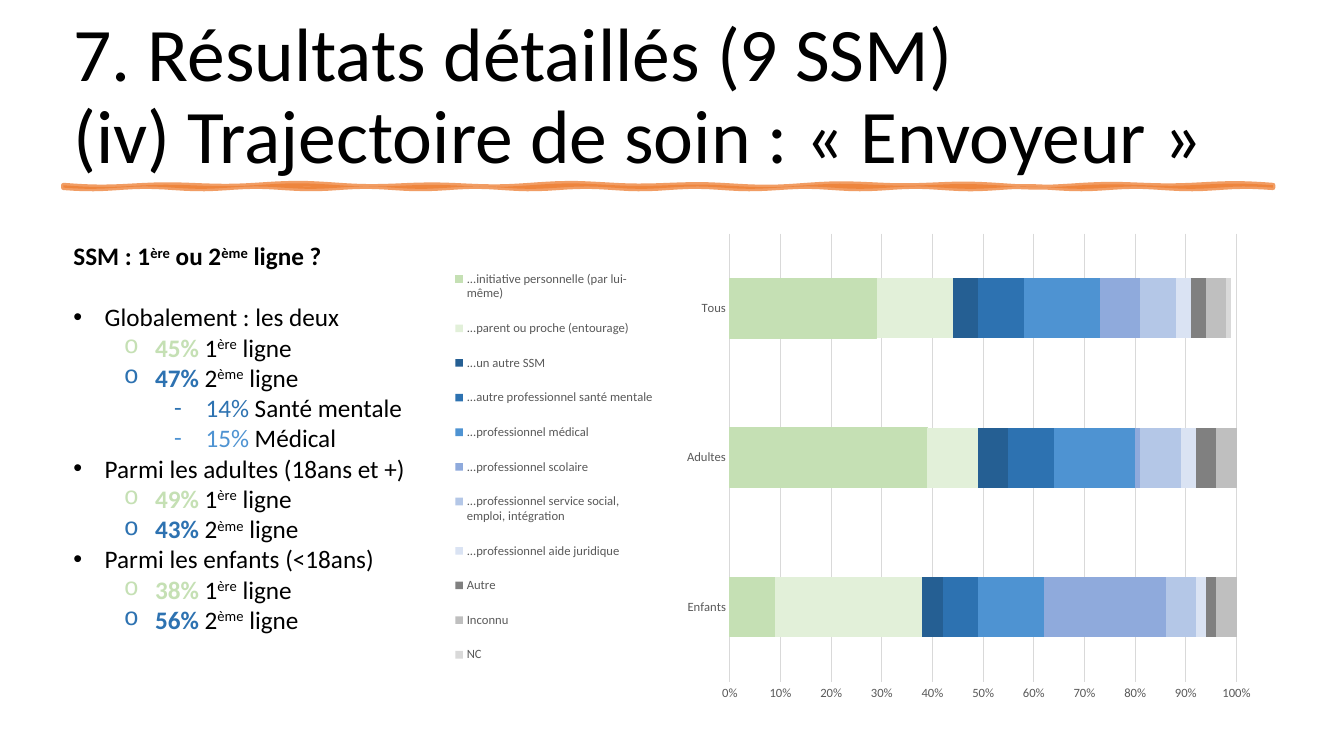
"""Build the slide on who sends patients to the mental health services."""
from math import pi, sin
from lxml.etree import SubElement
from pptx import Presentation
from pptx.chart.data import CategoryChartData
from pptx.dml.color import RGBColor
from pptx.enum.chart import XL_CHART_TYPE, XL_LEGEND_POSITION, XL_TICK_MARK
from pptx.enum.text import MSO_ANCHOR
from pptx.oxml import parse_xml
from pptx.oxml.ns import nsdecls, qn
from pptx.util import Cm, Pt

FONT = "Calibri"
BLACK, GREY, RULE, ORANGE = "000000", "595959", "D9D9D9", "ED7D31"
GREEN, BLUE, SKY = "C5E0B4", "2D72B1", "4E93D2"
TITLE = "7. Résultats détaillés (9 SSM)\v(iv) Trajectoire de soin : «\u00a0Envoyeur\u00a0»"
HEAD = "SSM : 1^ère^ ou 2^ème^ ligne ?"
FIRST, SECOND = " 1^ère^ ligne", " 2^ème^ ligne"
ITEMS = [
    (0, "", BLACK, "Globalement : les deux"),
    (1, "45%", GREEN, FIRST),
    (1, "47%", BLUE, SECOND),
    (2, "14%", BLUE, " Santé mentale"),
    (2, "15%", SKY, " Médical"),
    (0, "", BLACK, "Parmi les adultes (18ans et +)"),
    (1, "49%", GREEN, FIRST),
    (1, "43%", BLUE, SECOND),
    (0, "", BLACK, "Parmi les enfants (<18ans)"),
    (1, "38%", GREEN, FIRST),
    (1, "56%", BLUE, SECOND),
]
BULLETS = [("•", "Arial"), ("o", "Courier New"), ("-", FONT)]
CATS = ["Enfants", "Adultes", "Tous"]
SERIES = [
    ("...initiative personnelle (par lui-même)", (0.09, 0.39, 0.29), GREEN),
    ("...parent ou proche (entourage)", (0.29, 0.1, 0.15), "E2F0D9"),
    ("...un autre SSM", (0.04, 0.06, 0.05), "255F93"),
    ("...autre professionnel santé mentale", (0.07, 0.09, 0.09), BLUE),
    ("...professionnel médical", (0.13, 0.16, 0.15), SKY),
    ("...professionnel scolaire", (0.24, 0.01, 0.08), "8FAADC"),
    ("...professionnel service social, emploi, intégration", (0.06, 0.08, 0.07), "B4C7E7"),
    ("...professionnel aide juridique", (0.02, 0.03, 0.03), "DAE3F3"),
    ("Autre", (0.02, 0.04, 0.03), "808080"),
    ("Inconnu", (0.04, 0.04, 0.04), "BFBFBF"),
    ("NC", (0, 0, 0.01), RULE),
]
PLOT = {"x": 0.343, "y": 0.034, "w": 0.613, "h": 0.895}
LEGEND = {"x": 0.01, "y": 0.07, "w": 0.24, "h": 0.86}
BOXES = {
    "title": (1.6, 0.66, 30.61, 3.99),
    "list": (1.6, 5.94, 9.35, 10.26),
    "chart": (11.25, 5.46, 20.83, 12.62),
}


def put(item, values):
    """Set each attribute of an item from a dict."""
    for name, value in values.items():
        setattr(item, name, value)


def tint(part, code):
    """Give a fill a solid colour."""
    part.solid()
    part.fore_color.rgb = RGBColor.from_string(code)


def style(font, size, code, bold=False):
    """Set the face, size, weight and colour of a font."""
    put(font, {"name": FONT, "size": Pt(size), "bold": bold})
    tint(font.fill, code)


def place(name):
    """Return the four lengths of a named box."""
    return [Cm(side) for side in BOXES[name]]


def write(para, text, code=BLACK, bold=False):
    """Add runs to a paragraph, raising the parts between carets."""
    for rank, part in enumerate(text.split("^")):
        if part:
            run = para.add_run()
            run.text = part
            style(run.font, 18, code, bold)
            if rank % 2:
                run.font._element.set("baseline", "30000")


def mark(para, level):
    """Indent a paragraph and give it the bullet of its level."""
    sign, face = BULLETS[level]
    props = para._p.get_or_add_pPr()
    props.set("marL", str(Cm(0.79 + 1.27 * level)))
    props.set("indent", str(Cm(-0.79)))
    SubElement(props, qn("a:buFont")).set("typeface", face)
    SubElement(props, qn("a:buChar")).set("char", sign)


def add_title(slide):
    """Add the two-line title."""
    frame = slide.shapes.add_textbox(*place("title")).text_frame
    put(frame, {"word_wrap": True, "vertical_anchor": MSO_ANCHOR.BOTTOM})
    para = frame.paragraphs[0]
    put(para, {"text": TITLE, "line_spacing": 0.9})
    for run in para.runs:
        style(run.font, 54, BLACK)


def add_stroke(slide):
    """Add the wavy brush stroke under the title."""
    steps, left, width = 120, 1.6, 30.48
    top, low = [], []
    for step in range(steps + 1):
        across, turn = left + width * step / steps, 2 * pi * step / steps
        top.append((Cm(across), Cm(4.67 + 0.03 * sin(9 * turn) + 0.02 * sin(4 * turn))))
        low.append((Cm(across), Cm(4.73 + 0.03 * sin(11 * turn))))
    build = slide.shapes.build_freeform(*top[0], scale=1.0)
    build.add_line_segments(top[1:] + low[::-1], close=True)
    stroke = build.convert_to_shape()
    stroke.shadow.inherit = False
    stroke.line.width = Pt(3.5)
    for part in (stroke.fill, stroke.line.fill):
        tint(part, ORANGE)
    for shade in stroke._element.spPr.iter(qn("a:srgbClr")):
        SubElement(shade, qn("a:alpha")).set("val", "75000")


def add_list(slide):
    """Add the heading and the bulleted shares."""
    frame = slide.shapes.add_textbox(*place("list")).text_frame
    frame.word_wrap = True
    write(frame.paragraphs[0], HEAD, bold=True)
    for rank, (level, share, code, text) in enumerate(ITEMS):
        para = frame.add_paragraph()
        para.level = level
        if rank == 0:
            para.space_before = Pt(22)
        mark(para, level)
        write(para, share, code, level == 1)
        write(para, text)


def layout(box, inner=False):
    """Return the XML of a manual chart layout."""
    target = '<c:layoutTarget val="inner"/>' if inner else ""
    modes = "".join(f'<c:{side}Mode val="edge"/>' for side in "xy")
    sides = "".join(f'<c:{side} val="{size}"/>' for side, size in box.items())
    return parse_xml(f'<c:layout {nsdecls("c")}><c:manualLayout>{target}{modes}{sides}'
                     "</c:manualLayout></c:layout>")


def add_bars(slide):
    """Add the stacked bars by age group."""
    data = CategoryChartData(number_format="0%")
    data.categories = CATS
    for name, values, _ in SERIES:
        data.add_series(name, values)
    chart = slide.shapes.add_chart(XL_CHART_TYPE.BAR_STACKED, *place("chart"), data).chart
    put(chart, {"has_title": False, "has_legend": True})
    style(chart.font, 10, BLACK)
    put(chart.legend, {"position": XL_LEGEND_POSITION.LEFT, "include_in_layout": False})
    style(chart.legend.font, 9, GREY)
    plot = chart.plots[0]
    put(plot, {"gap_width": 150, "overlap": 100, "vary_by_categories": False})
    for bar, (_, _, code) in zip(plot.series, SERIES):
        tint(bar.format.fill, code)
    edge = plot.series[0].format.line
    tint(edge.fill, GREEN)
    edge.width = Pt(0.75)
    group, scale = chart.category_axis, chart.value_axis
    for axis in (group, scale):
        put(axis, {"major_tick_mark": XL_TICK_MARK.NONE, "minor_tick_mark": XL_TICK_MARK.NONE})
        style(axis.tick_labels.font, 9, GREY)
    put(scale, {"minimum_scale": 0, "maximum_scale": 1, "major_unit": 0.1,
                "has_major_gridlines": True})
    put(scale.tick_labels, {"number_format": "0%", "number_format_is_linked": False})
    scale.format.line.fill.background()
    for line in (group.format.line, scale.major_gridlines.format.line):
        tint(line.fill, RULE)
        line.width = Pt(0.75)
    area = chart._chartSpace.chart.plotArea
    for old in area.findall(qn("c:layout")):
        area.remove(old)
    area.insert(0, layout(PLOT, True))
    key = chart.legend._element
    for old in key.findall(qn("c:layout")):
        key.remove(old)
    key.find(qn("c:legendPos")).addnext(layout(LEGEND))


def main():
    """Build and save the slide."""
    deck = Presentation()
    put(deck, {"slide_width": Cm(33.87), "slide_height": Cm(19.05)})
    slide = deck.slides.add_slide(deck.slide_layouts[6])
    for add in (add_title, add_stroke, add_bars, add_list):
        add(slide)
    deck.save("out.pptx")


if __name__ == "__main__":
    main()
